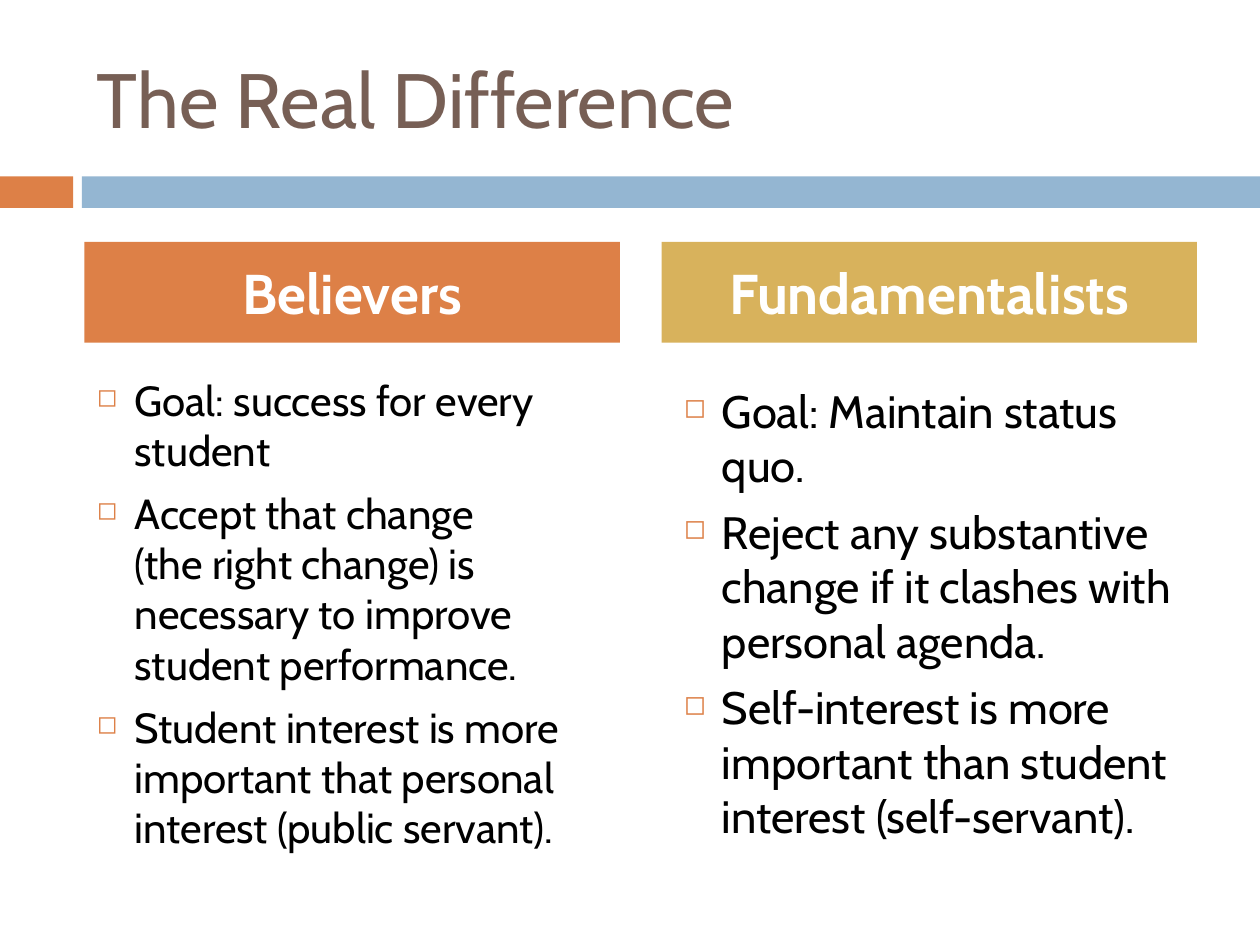
import pptx
import pptx.util
import pptx.dml.color
import pptx.enum.shapes
import pptx.enum.text
import lxml.etree
from pptx.oxml.ns import qn

TITLE = "The Real Difference"
COLUMNS = [
    {"head": "Believers", "fill": "orange", "size": "left_body",
     "shift": (0, 0), "width": 4.33,
     "points": ["Goal: success for every student",
                "Accept that change \n(the right change) is necessary to improve student performance.",
                "Student interest is more important that personal interest (public servant)."]},
    {"head": "Fundamentalists", "fill": "gold", "size": "right_body",
     "shift": (0.08, 0.07), "width": 4.25,
     "points": ["Goal: Maintain status quo.",
                "Reject any substantive change if it clashes with personal agenda.",
                "Self-interest is more important than student interest (self-servant)."]},
]
THEME = {
    "font": "Cabin",
    "colors": {"orange": "DD8047", "blue": "94B6D2", "gold": "D8B25C",
               "brown": "775F55", "black": "000000", "white": "FFFFFF"},
    "sizes": {"title": 44, "head": 32, "left_body": 24, "right_body": 25.9},
}
W, H = 10, 7.5
MARGIN, COL_W, GAP = 0.67, 4.25, 0.33
BAND_Y, BAND_H, BAND_SPLIT, BAND_GAP = 1.4, 0.25, 0.58, 0.07
HEAD_Y, HEAD_H = 1.92, 0.8
BODY_Y, BODY_H = 2.92, 4.33
INDENT, SPACE = 0.3, 7

ANCHOR = pptx.enum.text.MSO_ANCHOR
ALIGN = pptx.enum.text.PP_ALIGN


def color(name):
    return pptx.dml.color.RGBColor.from_string(THEME["colors"][name])


def inches(*values):
    return [pptx.util.Inches(v) for v in values]


def add_rect(s, box, fill):
    sp = s.shapes.add_shape(pptx.enum.shapes.MSO_SHAPE.RECTANGLE, *inches(*box))
    sp.shadow.inherit = False
    sp.fill.solid()
    sp.fill.fore_color.rgb = color(fill)
    sp.line.fill.background()
    return sp


def add_text(sp, lines, size, ink, anchor, align=ALIGN.LEFT, bold=False, space=0, bullet=False):
    tf = sp.text_frame
    tf.word_wrap = True
    tf.vertical_anchor = anchor
    for i, line in enumerate(lines):
        p = tf.paragraphs[0] if i == 0 else tf.add_paragraph()
        p.alignment = align
        p.space_before = pptx.util.Pt(space)
        if bullet:
            add_bullet(p)
        for j, part in enumerate(line.split("\n")):
            if j:
                p.add_line_break()
            r = p.add_run()
            r.text = part
            r.font.name = THEME["font"]
            r.font.size = pptx.util.Pt(THEME["sizes"][size])
            r.font.bold = bold
            r.font.color.rgb = color(ink)


def add_bullet(p):
    pPr = p._p.get_or_add_pPr()
    indent = pptx.util.Inches(INDENT)
    pPr.set("marL", str(indent))
    pPr.set("indent", str(-indent))
    clr = lxml.etree.SubElement(pPr, qn("a:buClr"))
    lxml.etree.SubElement(clr, qn("a:srgbClr"), val=THEME["colors"]["orange"])
    lxml.etree.SubElement(pPr, qn("a:buSzPct"), val="60000")
    lxml.etree.SubElement(pPr, qn("a:buChar"), char="◻")


def main():
    prs = pptx.Presentation()
    prs.slide_width, prs.slide_height = inches(W, H)
    s = prs.slides.add_slide(prs.slide_layouts[6])

    band_x = BAND_SPLIT + BAND_GAP
    add_rect(s, (0, BAND_Y, BAND_SPLIT, BAND_H), "orange")
    add_rect(s, (band_x, BAND_Y, W - band_x, BAND_H), "blue")

    sp = s.shapes.add_textbox(*inches(MARGIN, 0.3, 2 * COL_W + GAP, 0.95))
    add_text(sp, [TITLE], "title", "brown", ANCHOR.MIDDLE)

    for i, col in enumerate(COLUMNS):
        x = MARGIN + i * (COL_W + GAP)
        dx, dy = col["shift"]
        sp = s.shapes.add_textbox(*inches(x + dx, BODY_Y + dy, col["width"], BODY_H))
        add_text(sp, col["points"], col["size"], "black", ANCHOR.TOP, space=SPACE, bullet=True)
        sp = add_rect(s, (x, HEAD_Y, COL_W, HEAD_H), col["fill"])
        add_text(sp, [col["head"]], "head", "white", ANCHOR.MIDDLE, ALIGN.CENTER, True, SPACE)

    prs.save("out.pptx")


if __name__ == "__main__":
    main()
